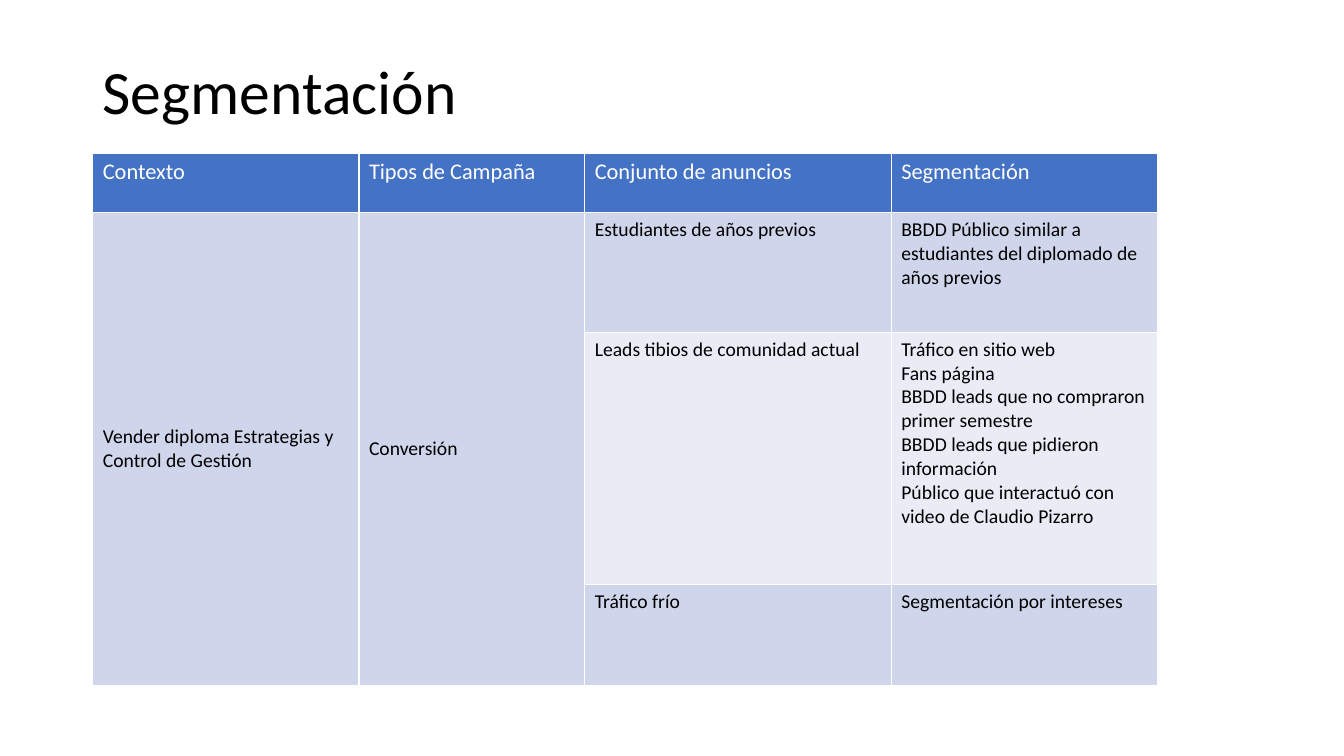
from dataclasses import dataclass

from pptx import Presentation
from pptx import util as u
from pptx.dml.color import RGBColor
from pptx.enum import text


@dataclass(frozen=True)
class Theme:
    font: str = "Calibri"
    title_size: int = 44
    header_size: int = 16
    body_size: int = 14
    ink: str = "000000"
    header_ink: str = "FFFFFF"
    header_fill: str = "4472C4"
    bands: tuple = ("CFD5EA", "E9EBF5")


THEME = Theme()

HEADERS = ["Contexto", "Tipos de Campaña", "Conjunto de anuncios", "Segmentación"]
CONTEXT = "Vender diploma Estrategias y Control de Gestión"
CAMPAIGN = "Conversión"
AD_SETS = [
    ("Estudiantes de años previos",
     ["BBDD Público similar a estudiantes del diplomado de años previos"]),
    ("Leads tibios de comunidad actual",
     ["Tráfico en sitio web",
      "Fans página",
      "BBDD leads que no compraron primer semestre",
      "BBDD leads que pidieron información",
      "Público que interactuó con video de Claudio Pizarro"]),
    ("Tráfico frío", ["Segmentación por intereses"]),
]
COLUMN_WIDTHS = [2.64, 2.24, 3.04, 2.64]
ROW_HEIGHTS = [0.59, 1.19, 2.5, 1]


def write(frame, lines, size, color):
    """Fill a text frame with one paragraph per line."""
    frame.text = "\n".join(lines)
    for para in frame.paragraphs:
        for span in para.runs:
            span.font.name = THEME.font
            span.font.size = u.Pt(size)
            span.font.bold = False
            span.font.color.rgb = RGBColor.from_string(color)


def fill_cell(cell, lines, fill, size=THEME.body_size, color=THEME.ink):
    write(cell.text_frame, lines, size, color)
    cell.fill.solid()
    cell.fill.fore_color.rgb = RGBColor.from_string(fill)


def add_title(page, box, wording):
    title = page.shapes.add_textbox(*map(u.Inches, box))
    frame = title.text_frame
    frame.word_wrap = True
    frame.vertical_anchor = text.MSO_ANCHOR.MIDDLE
    write(frame, [wording], THEME.title_size, THEME.ink)
    frame.paragraphs[0].line_spacing = 0.9


def add_segment_table(page, box):
    table = page.shapes.add_table(
        len(ROW_HEIGHTS), len(COLUMN_WIDTHS), *map(u.Inches, box)).table
    for column, width in zip(table.columns, COLUMN_WIDTHS):
        column.width = u.Inches(width)
    for row, height in zip(table.rows, ROW_HEIGHTS):
        row.height = u.Inches(height)

    # Header row
    for index, header in enumerate(HEADERS):
        fill_cell(table.cell(0, index), [header], THEME.header_fill,
                  THEME.header_size, THEME.header_ink)

    # Context and campaign span every ad set
    for index, wording in enumerate([CONTEXT, CAMPAIGN]):
        cell = table.cell(1, index)
        cell.merge(table.cell(len(AD_SETS), index))
        fill_cell(cell, [wording], THEME.bands[0])
        cell.vertical_anchor = text.MSO_ANCHOR.MIDDLE

    # Ad sets with their audiences
    for row, (ad_set, audiences) in enumerate(AD_SETS, start=1):
        band = THEME.bands[(row - 1) % 2]
        fill_cell(table.cell(row, 2), [ad_set], band)
        fill_cell(table.cell(row, 3), audiences, band)


def main():
    deck = Presentation()
    deck.slide_width, deck.slide_height = u.Inches(13.33), u.Inches(7.5)
    page = deck.slides.add_slide(deck.slide_layouts[6])
    add_title(page, (0.92, 0.21, 9.05, 1.45), "Segmentación")
    add_segment_table(
        page, (0.92, 1.52, sum(COLUMN_WIDTHS), sum(ROW_HEIGHTS)))
    deck.save("out.pptx")


if __name__ == "__main__":
    main()
